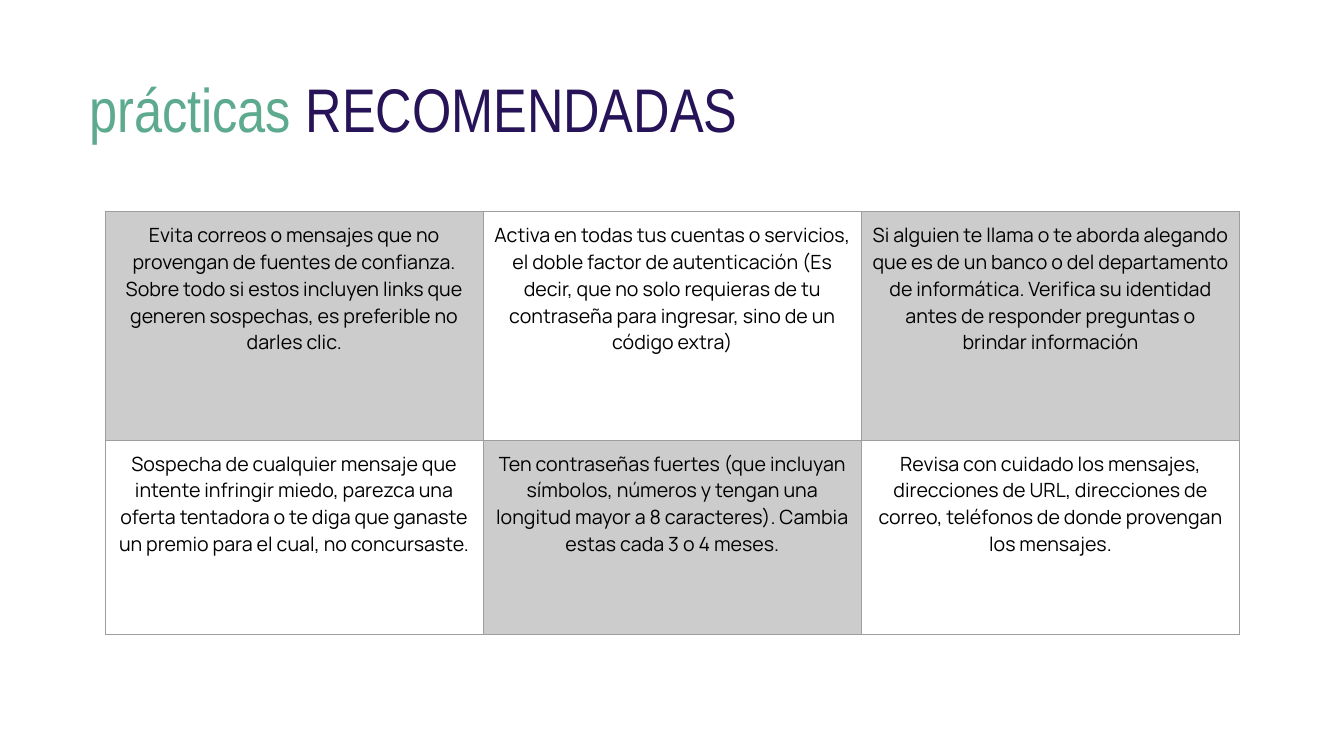
"""Build a slide with a checkerboard table of recommended security practices."""
from dataclasses import dataclass

from lxml import etree
from pptx import Presentation
from pptx.dml.color import RGBColor
from pptx.enum.text import MSO_ANCHOR, PP_ALIGN
from pptx.oxml.ns import qn
from pptx.util import Cm, Pt

MIDDLE = MSO_ANCHOR.MIDDLE
TOP = MSO_ANCHOR.TOP
CENTER = PP_ALIGN.CENTER

TITLE = (("prácticas ", "5EAA8F"), ("RECOMENDADAS", "271357"))
PRACTICES = (
    (
        "Evita correos o mensajes que no provengan de fuentes de confianza. Sobre todo "
        "si estos incluyen links que generen sospechas, es preferible no darles clic.",
        "Activa en todas tus cuentas o servicios, el doble factor de autenticación "
        "(Es decir, que no solo requieras de tu contraseña para ingresar, sino de un "
        "código extra)",
        "Si alguien te llama o te aborda alegando que es de un banco o del departamento "
        "de informática. Verifica su identidad antes de responder preguntas o brindar "
        "información",
    ),
    (
        "Sospecha de cualquier mensaje que intente infringir miedo, parezca una oferta "
        "tentadora o te diga que ganaste un premio para el cual, no concursaste.",
        "Ten contraseñas fuertes (que incluyan símbolos, números y tengan una longitud "
        "mayor a 8 caracteres). Cambia estas cada 3 o 4 meses.",
        "Revisa con cuidado los mensajes, direcciones de URL, direcciones de correo, "
        "teléfonos de donde provengan los mensajes.",
    ),
)


@dataclass(frozen=True)
class Theme:
    """Hold the colours, fonts and sizes of the slide."""

    title_font: str = "Arial Narrow"
    title_size: int = 44
    body_font: str = "Manrope"
    body_size: int = 14
    body_color: str = "000000"
    shade: str = "CCCCCC"
    border: str = "9E9E9E"
    border_width: float = 0.75


class SlideBuilder:
    """Draw styled elements on the current slide."""

    def __init__(self, slide, theme):
        """Keep the slide and its theme."""
        self.slide = slide
        self.theme = theme

    def add_run(self, paragraph, text, font_name, size, color):
        """Append one formatted run to a paragraph."""
        run = paragraph.add_run()
        run.text = text
        run.font.name = font_name
        run.font.size = Pt(size)
        run.font.color.rgb = RGBColor.from_string(color)

    def add_title(self, parts, left, top, width, height):
        """Add a title made of coloured parts."""
        shape = self.slide.shapes.add_textbox(Cm(left), Cm(top), Cm(width), Cm(height))
        frame = shape.text_frame
        frame.word_wrap = True
        frame.vertical_anchor = MIDDLE
        paragraph = frame.paragraphs[0]
        paragraph.line_spacing = 0.9
        for text, color in parts:
            self.add_run(paragraph, text, self.theme.title_font, self.theme.title_size, color)

    def add_borders(self, cell):
        """Outline the four sides of a cell."""
        properties = cell._tc.get_or_add_tcPr()
        for index, side in enumerate(("a:lnL", "a:lnR", "a:lnT", "a:lnB")):
            line = etree.Element(qn(side), w=str(Pt(self.theme.border_width)))
            fill = etree.SubElement(line, qn("a:solidFill"))
            etree.SubElement(fill, qn("a:srgbClr"), val=self.theme.border)
            properties.insert(index, line)

    def fill_cell(self, cell, text, shaded):
        """Write and style one table cell."""
        cell.margin_left = cell.margin_right = Cm(0.25)
        cell.margin_top = cell.margin_bottom = Cm(0.25)
        cell.vertical_anchor = TOP
        paragraph = cell.text_frame.paragraphs[0]
        paragraph.alignment = CENTER
        theme = self.theme
        self.add_run(paragraph, text, theme.body_font, theme.body_size, theme.body_color)
        self.add_borders(cell)
        if shaded:
            cell.fill.solid()
            cell.fill.fore_color.rgb = RGBColor.from_string(theme.shade)
        else:
            cell.fill.background()

    def add_checkerboard(self, rows, left, top, column_width, row_heights):
        """Add a table whose cells alternate between shaded and clear."""
        column_count = len(rows[0])
        table = self.slide.shapes.add_table(
            len(rows), column_count, Cm(left), Cm(top),
            Cm(column_width * column_count), Cm(sum(row_heights)),
        ).table
        table.first_row = False
        table.horz_banding = False
        for column in table.columns:
            column.width = Cm(column_width)
        for row_index, (texts, height) in enumerate(zip(rows, row_heights)):
            table.rows[row_index].height = Cm(height)
            for column_index, text in enumerate(texts):
                shaded = (row_index + column_index) % 2 == 0
                self.fill_cell(table.cell(row_index, column_index), text, shaded)


def main():
    """Create the presentation and save it."""
    presentation = Presentation()
    presentation.slide_width = Cm(33.87)
    presentation.slide_height = Cm(19.05)
    slide = presentation.slides.add_slide(presentation.slide_layouts[6])
    builder = SlideBuilder(slide, Theme())
    builder.add_title(TITLE, 2, 1, 29.2, 3.68)
    builder.add_checkerboard(PRACTICES, 2.65, 5.33, 9.53, (5.76, 4.9))
    presentation.save("out.pptx")


if __name__ == "__main__":
    main()
